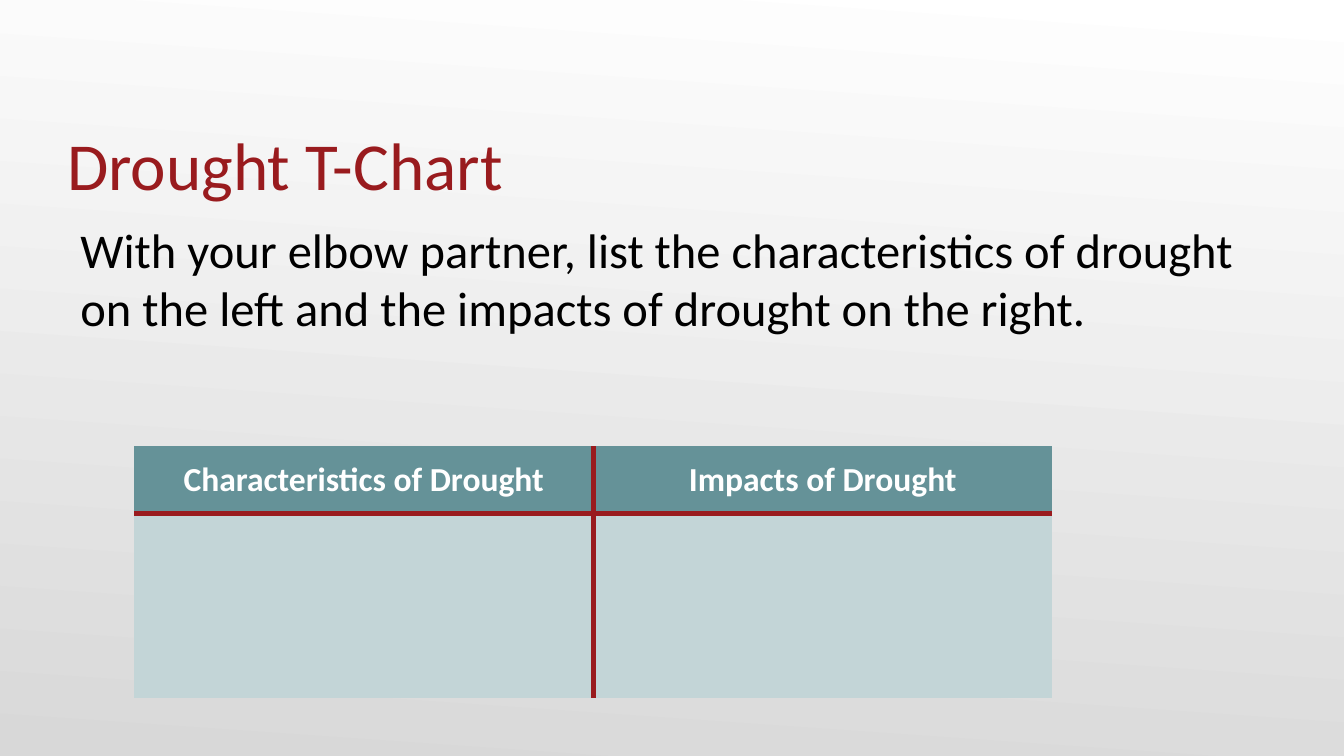
from lxml import etree
from pptx import Presentation
from pptx.dml.color import RGBColor
from pptx.enum.text import MSO_ANCHOR, PP_ALIGN
from pptx.oxml.ns import qn
from pptx.util import Inches, Pt

BOTTOM = MSO_ANCHOR.BOTTOM
TOP = MSO_ANCHOR.TOP
LEFT = PP_ALIGN.LEFT
CENTER = PP_ALIGN.CENTER
TITLE_ONLY = 5
WIDTH = 10
HEIGHT = WIDTH * 9 / 16
MARGIN = 0.05 * WIDTH
CONTENT_WIDTH = WIDTH - 2 * MARGIN
FONT = "Calibri"
RED, TEAL, PALE_TEAL = "991B1E", "659298", "C3D5D7"
BLACK, WHITE, GRAY = "000000", "FFFFFF", "D8D8D8"
HEADINGS = ("Characteristics of Drought", "Impacts of Drought")


def color(value):
    return RGBColor.from_string(value)


def set_background(slide):
    fill = slide.background.fill
    fill.gradient()
    fill.gradient_angle = 266
    for stop, value in zip(fill.gradient_stops, (WHITE, GRAY)):
        stop.color.rgb = color(value)


def write(frame, text, size, value, alignment=LEFT, bold=False):
    frame.text = text
    paragraph = frame.paragraphs[0]
    paragraph.alignment = alignment
    font = paragraph.runs[0].font
    font.name, font.size, font.bold = FONT, Pt(size), bold
    font.color.rgb = color(value)


def place(shape, box):
    shape.left, shape.top, shape.width, shape.height = map(Inches, box)


def set_insets(frame, left, top, right, bottom):
    frame.margin_left, frame.margin_top = Inches(left), Inches(top)
    frame.margin_right, frame.margin_bottom = Inches(right), Inches(bottom)


def add_title(slide, box):
    title = slide.shapes.title
    place(title, box)
    frame = title.text_frame
    frame.word_wrap = True
    frame.vertical_anchor = BOTTOM
    set_insets(frame, 0, 0.05, 0, 0)
    write(frame, "Drought T-Chart", 36, RED)


def add_instructions(slide, box):
    frame = slide.shapes.add_textbox(*map(Inches, box)).text_frame
    frame.word_wrap = True
    frame.vertical_anchor = TOP
    set_insets(frame, 0.1, 0.05, 0.1, 0.05)
    write(frame, "With your elbow partner, list the characteristics of drought "
          "on the left and the impacts of drought on the right.", 26, BLACK)


def set_borders(cell, red_sides):
    properties = cell._tc.get_or_add_tcPr()
    for side in "LRTB":
        line = etree.SubElement(properties, qn(f"a:ln{side}"), w=str(Pt(3)))
        if side in red_sides:
            fill = etree.SubElement(line, qn("a:solidFill"))
            etree.SubElement(fill, qn("a:srgbClr"), val=RED)
        else:
            etree.SubElement(line, qn("a:noFill"))


def add_t_chart(slide, box, header_height):
    table = slide.shapes.add_table(2, 2, *map(Inches, box)).table
    table.rows[0].height = Inches(header_height)
    table.rows[1].height = Inches(box[3] - header_height)
    for row, (value, row_side) in enumerate(((TEAL, "B"), (PALE_TEAL, "T"))):
        for column, column_side in enumerate("RL"):
            cell = table.cell(row, column)
            set_insets(cell, 0.1, 0.1, 0.1, 0.1)
            set_borders(cell, row_side + column_side)
            cell.fill.solid()
            cell.fill.fore_color.rgb = color(value)
    for column, heading in enumerate(HEADINGS):
        write(table.cell(0, column).text_frame, heading, 18, WHITE, CENTER, True)


def main():
    presentation = Presentation()
    presentation.slide_width = Inches(WIDTH)
    presentation.slide_height = Inches(HEIGHT)
    slide = presentation.slides.add_slide(presentation.slide_layouts[TITLE_ONLY])
    set_background(slide)
    add_title(slide, (MARGIN, 0.58, CONTENT_WIDTH, 0.94))
    add_instructions(slide, (MARGIN, 1.59, CONTENT_WIDTH, 3.6))
    add_t_chart(slide, (2 * MARGIN, 3.32, 6.83, 1.87), 0.5)
    presentation.save("out.pptx")


if __name__ == "__main__":
    main()
